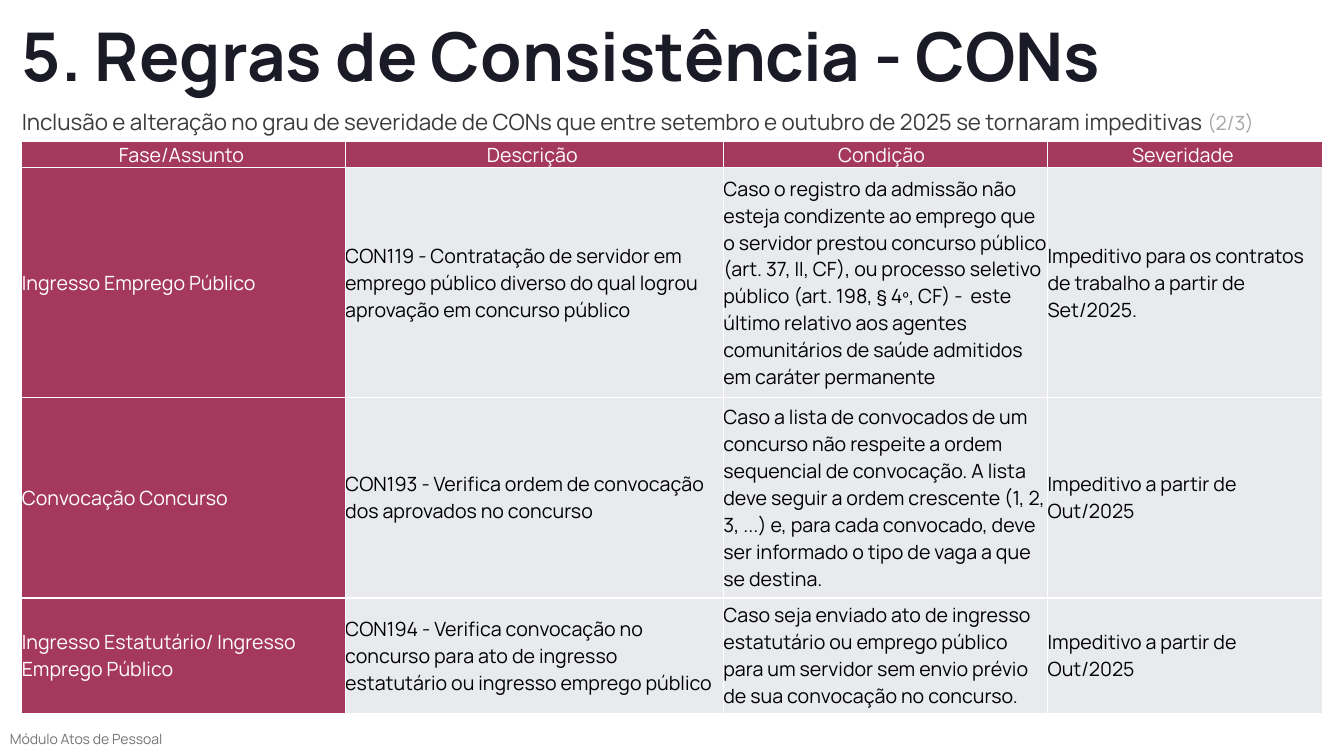
from lxml import etree
from pptx import Presentation
from pptx.dml.color import RGBColor
from pptx.enum.text import MSO_ANCHOR, PP_ALIGN
from pptx.oxml.ns import qn
from pptx.util import Cm, Pt

CENTER, LEFT, JUSTIFY = PP_ALIGN.CENTER, PP_ALIGN.LEFT, PP_ALIGN.JUSTIFY
MIDDLE = MSO_ANCHOR.MIDDLE

THEME = {
    "font": "Manrope",
    "title": {"size": 48, "color": "1B1B27", "bold": True},
    "subtitle": {"size": 16, "color": "3C3939"},
    "page": {"size": 14, "color": "A6A6A6"},
    "footer": {"size": 10, "color": "747474"},
    "label": {"size": 14, "color": "FFFFFF"},
    "body": {"size": 14, "color": "000000"},
    "label_fill": "A5395D",
    "body_fill": "E8EAED",
    "border": "FFFFFF",
}
NO_MARGINS = {"margin_left": 0, "margin_right": 0,
              "margin_top": 0, "margin_bottom": 0}

TEXT_BOXES = [
    {
        "runs": [("Módulo Atos de Pessoal", "footer")],
        "box": (0, 18.33, 32.39, 0.56),
        "frame": {"word_wrap": True},
        "paragraph": {"line_spacing": 0.9},
    },
    {
        "runs": [("5. Regras de Consistência - CONs", "title")],
        "box": (0.55, 0.76, 30, 1.65),
        "frame": {"word_wrap": True, **NO_MARGINS},
        "paragraph": {"line_spacing": Pt(46.2)},
    },
    {
        "runs": [
            ("Inclusão e alteração no grau de severidade de CONs que entre "
             "setembro e outubro de 2025 se tornaram impeditivas ", "subtitle"),
            ("(2/3)", "page"),
        ],
        "box": (0.55, 2.57, 32.77, 1.09),
        "frame": {"word_wrap": True, **NO_MARGINS},
        "paragraph": {"line_spacing": Pt(23.7), "alignment": JUSTIFY},
    },
]

RULES = [
    ("Fase/Assunto ", "Descrição ", "Condição  ", "Severidade "),
    (
        "Ingresso Emprego Público",
        "CON119 - Contratação de servidor em emprego público diverso do qual "
        "logrou aprovação em concurso público",
        "Caso o registro da admissão não esteja condizente ao emprego que o "
        "servidor prestou concurso público (art. 37, II, CF), ou processo "
        "seletivo público (art. 198, § 4º, CF) -  este último relativo aos "
        "agentes comunitários de saúde admitidos em caráter permanente",
        "Impeditivo para os contratos de trabalho a partir de Set/2025.",
    ),
    (
        "Convocação Concurso",
        "CON193 - Verifica ordem de convocação dos aprovados no concurso",
        "Caso a lista de convocados de um concurso não respeite a ordem "
        "sequencial de convocação. A lista deve seguir a ordem crescente "
        "(1, 2, 3, ...) e, para cada convocado, deve ser informado o tipo de "
        "vaga a que se destina.",
        "Impeditivo a partir de Out/2025",
    ),
    (
        "Ingresso Estatutário/ Ingresso Emprego Público",
        "CON194 - Verifica convocação no concurso para ato de ingresso "
        "estatutário ou ingresso emprego público",
        "Caso seja enviado ato de ingresso estatutário ou emprego público para "
        "um servidor sem envio prévio de sua convocação no concurso.",
        "Impeditivo a partir de Out/2025",
    ),
]
TABLE_LEFT, TABLE_TOP = 0.55, 3.56
COLUMN_WIDTHS = (8.15, 9.53, 8.17, 6.92)
ROW_HEIGHTS = (0.67, 5.79, 5.05, 2.9)


def apply(target, values):
    for name, value in values.items():
        setattr(target, name, value)


def add_run(paragraph, text, style_name):
    style = THEME[style_name]
    run = paragraph.add_run()
    run.text = text
    apply(run.font, {"name": THEME["font"], "size": Pt(style["size"]),
                     "bold": style.get("bold", False)})
    run.font.color.rgb = RGBColor.from_string(style["color"])


def add_text_box(slide, content):
    shape = slide.shapes.add_textbox(*map(Cm, content["box"]))
    apply(shape.text_frame, content["frame"])
    paragraph = shape.text_frame.paragraphs[0]
    apply(paragraph, content["paragraph"])
    for text, style_name in content["runs"]:
        add_run(paragraph, text, style_name)


def add_borders(cell):
    properties = cell._tc.get_or_add_tcPr()
    for side in ("lnL", "lnR", "lnT", "lnB"):
        line = etree.SubElement(properties, qn(f"a:{side}"), w=str(Pt(1)))
        fill = etree.SubElement(line, qn("a:solidFill"))
        etree.SubElement(fill, qn("a:srgbClr"), val=THEME["border"])


def fill_cell(cell, text, is_header, is_label):
    apply(cell, {"vertical_anchor": MIDDLE, **NO_MARGINS})
    add_borders(cell)
    cell.fill.solid()
    cell.fill.fore_color.rgb = RGBColor.from_string(
        THEME["label_fill" if is_label else "body_fill"])
    paragraph = cell.text_frame.paragraphs[0]
    paragraph.alignment = CENTER if is_header else LEFT
    add_run(paragraph, text, "label" if is_label else "body")


def add_rules_table(slide):
    table = slide.shapes.add_table(
        len(RULES), len(COLUMN_WIDTHS), Cm(TABLE_LEFT), Cm(TABLE_TOP),
        Cm(sum(COLUMN_WIDTHS)), Cm(sum(ROW_HEIGHTS))).table
    apply(table, {"first_row": False, "horz_banding": False})
    for column, width in zip(table.columns, COLUMN_WIDTHS):
        column.width = Cm(width)
    for row_index, (row, height, texts) in enumerate(
            zip(table.rows, ROW_HEIGHTS, RULES)):
        row.height = Cm(height)
        for column_index, text in enumerate(texts):
            is_header = row_index == 0
            fill_cell(row.cells[column_index], text, is_header,
                      is_header or column_index == 0)


def main():
    presentation = Presentation()
    apply(presentation, {"slide_width": Cm(33.87), "slide_height": Cm(19.05)})
    slide = presentation.slides.add_slide(presentation.slide_layouts[6])
    footer, title, subtitle = TEXT_BOXES
    add_text_box(slide, footer)
    add_text_box(slide, title)
    add_rules_table(slide)
    add_text_box(slide, subtitle)
    presentation.save("out.pptx")


if __name__ == "__main__":
    main()
